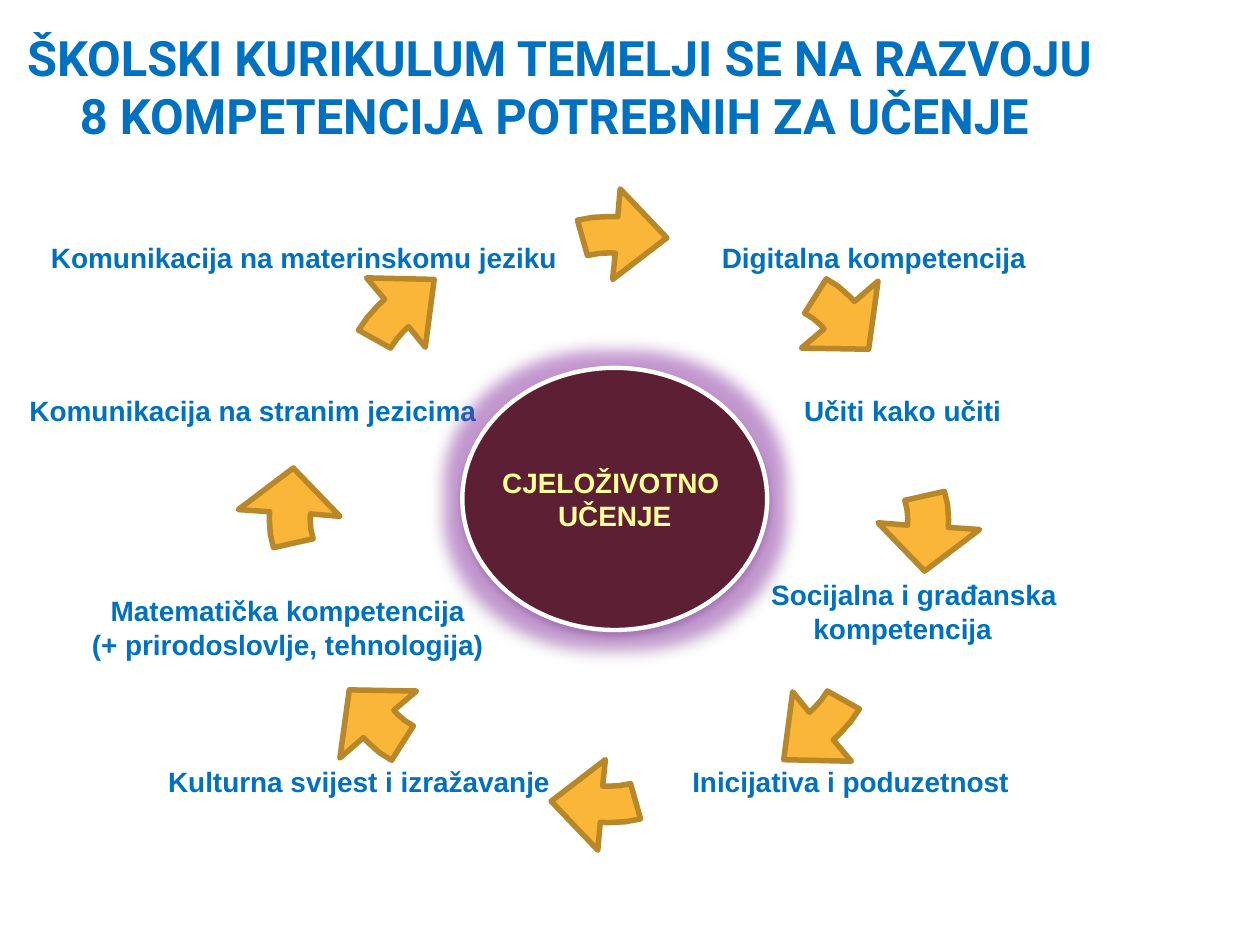
from math import cos, pi, sin

from lxml import etree
from pptx import Presentation
from pptx.dml.color import RGBColor
from pptx.enum.shapes import MSO_SHAPE
from pptx.enum.text import MSO_ANCHOR, PP_ALIGN
from pptx.oxml.ns import qn
from pptx.util import Pt

OVAL = MSO_SHAPE.OVAL
TOP, MIDDLE = MSO_ANCHOR.TOP, MSO_ANCHOR.MIDDLE
CENTER = PP_ALIGN.CENTER
BLUE, GOLD, BROWN = "0070C0", "F9B639", "B8872A"
WINE, CREAM, WHITE, PURPLE = "5C1F34", "FFFF99", "FFFFFF", "9C2FBB"
ARROW = [
    (52.6, 16.8), (50, 16.7), (45.6, 17), (41.2, 17.9),
    (37.1, 1.7), (43.3, 0.4), (50, 0), (53.6, 0.1),
    (54.6, -12.7), (73.7, 9.8), (51.5, 28.9),
]
LABELS = [
    (173.7, 147.2, 300, ["Komunikacija na materinskomu jeziku"], 0),
    (144.6, 234.5, 260, ["Komunikacija na stranim jezicima"], 0),
    (164.4, 358.6, 230, ["Matematička kompetencija", "(+ prirodoslovlje, tehnologija)"], 0),
    (205.2, 446.3, 224, ["Kulturna svijest i izražavanje"], 0),
    (486, 446.3, 190, ["Inicijativa i poduzetnost"], 0),
    (515.8, 349.4, 190, ["Socijalna i građanska", "kompetencija"], 13),
    (515.8, 234.5, 130, ["Učiti kako učiti"], 0),
    (499.4, 147.2, 190, ["Digitalna kompetencija"], 0),
]


def rgb(code):
    return RGBColor.from_string(code)


def paint(shape, fill, line, width):
    shape.shadow.inherit = False
    shape.fill.solid()
    shape.fill.fore_color.rgb = rgb(fill)
    shape.line.color.rgb = rgb(line)
    shape.line.width = Pt(width)


def write(shape, lines, font, size, color, shift=0, side="marL", anchor=MIDDLE, wrap=False):
    frame = shape.text_frame
    frame.word_wrap = wrap
    frame.vertical_anchor = anchor
    frame.margin_left = frame.margin_right = 0
    frame.margin_top = frame.margin_bottom = 0
    for i, line in enumerate(lines):
        para = frame.paragraphs[0] if i == 0 else frame.add_paragraph()
        para.text = line
        para.alignment = CENTER
        if i == 0 and shift:
            para._p.get_or_add_pPr().set(side, str(Pt(shift)))
        para.font.name = font
        para.font.size = Pt(size)
        para.font.bold = True
        para.font.color.rgb = rgb(color)


def add_title(slide, x, y, w, h):
    box = slide.shapes.add_textbox(Pt(x), Pt(y), Pt(w), Pt(h))
    text = "ŠKOLSKI KURIKULUM TEMELJI SE NA RAZVOJU 8 KOMPETENCIJA POTREBNIH ZA UČENJE"
    write(box, [text], "Roboto", 27.9, BLUE, 6, "indent", TOP, True)


def add_arrow(slide, x, y, w, h, angle):
    left, top, wide, high = Pt(x - w / 2), Pt(y - h / 2), Pt(w), Pt(h)
    points = [(int(left + u * wide / 100), int(top + v * high / 100)) for u, v in ARROW]
    build = slide.shapes.build_freeform(*points[0])
    build.add_line_segments(points[1:], close=True)
    arrow = build.convert_to_shape()
    for node in arrow._element.iter(qn("a:path")):
        node.set("w", str(wide))
        node.set("h", str(high))
    for node, (px, py) in zip(arrow._element.iter(qn("a:pt")), points):
        node.set("x", str(px - left))
        node.set("y", str(py - top))
    arrow.left, arrow.top, arrow.width, arrow.height = left, top, wide, high
    arrow.rotation = angle
    paint(arrow, GOLD, BROWN, 3.15)


def add_ring(slide, x, y, w, h):
    long, short = 139.7, 124.5
    for i in range(8):
        turn = i * pi / 4
        size = (long, short) if i % 4 in (0, 3) else (short, long)
        mid = (x + w / 2 * (1 + sin(turn)), y + h / 2 * (1 - cos(turn)))
        add_arrow(slide, *mid, *size, i * 45)


def add_labels(slide):
    for x, y, w, lines, shift in LABELS:
        h = 20 * len(lines)
        box = slide.shapes.add_textbox(Pt(x - w / 2), Pt(y - h / 2), Pt(w), Pt(h))
        write(box, lines, "Arial", 16, BLUE, shift)


def add_effect(group, tag, color, alpha, **attrs):
    node = etree.SubElement(group, qn(tag), {k: str(v) for k, v in attrs.items()})
    tint = etree.SubElement(node, qn("a:srgbClr"), val=color)
    etree.SubElement(tint, qn("a:alpha"), val=str(alpha * 1000))


def add_hub(slide, x, y, w, h):
    hub = slide.shapes.add_shape(OVAL, Pt(x), Pt(y), Pt(w), Pt(h))
    paint(hub, WINE, WHITE, 2.5)
    group = hub._element.spPr.find(qn("a:effectLst"))
    add_effect(group, "a:glow", PURPLE, 40, rad=Pt(18))
    add_effect(group, "a:outerShdw", "000000", 35,
               blurRad=Pt(4), dist=Pt(2), dir=5400000, rotWithShape=0)
    write(hub, ["CJELOŽIVOTNO ", "UČENJE"], "Arial", 16, CREAM)


def main():
    deck = Presentation()
    deck.slide_width, deck.slide_height = Pt(720), Pt(540)
    slide = deck.slides.add_slide(deck.slide_layouts[6])
    add_title(slide, 5.7, 15.7, 622, 70)
    add_ring(slide, 223.8, 186, 248.4, 221.8)
    add_labels(slide)
    add_hub(slide, 264.2, 210.2, 174.2, 149.8)
    deck.save("out.pptx")


if __name__ == "__main__":
    main()
